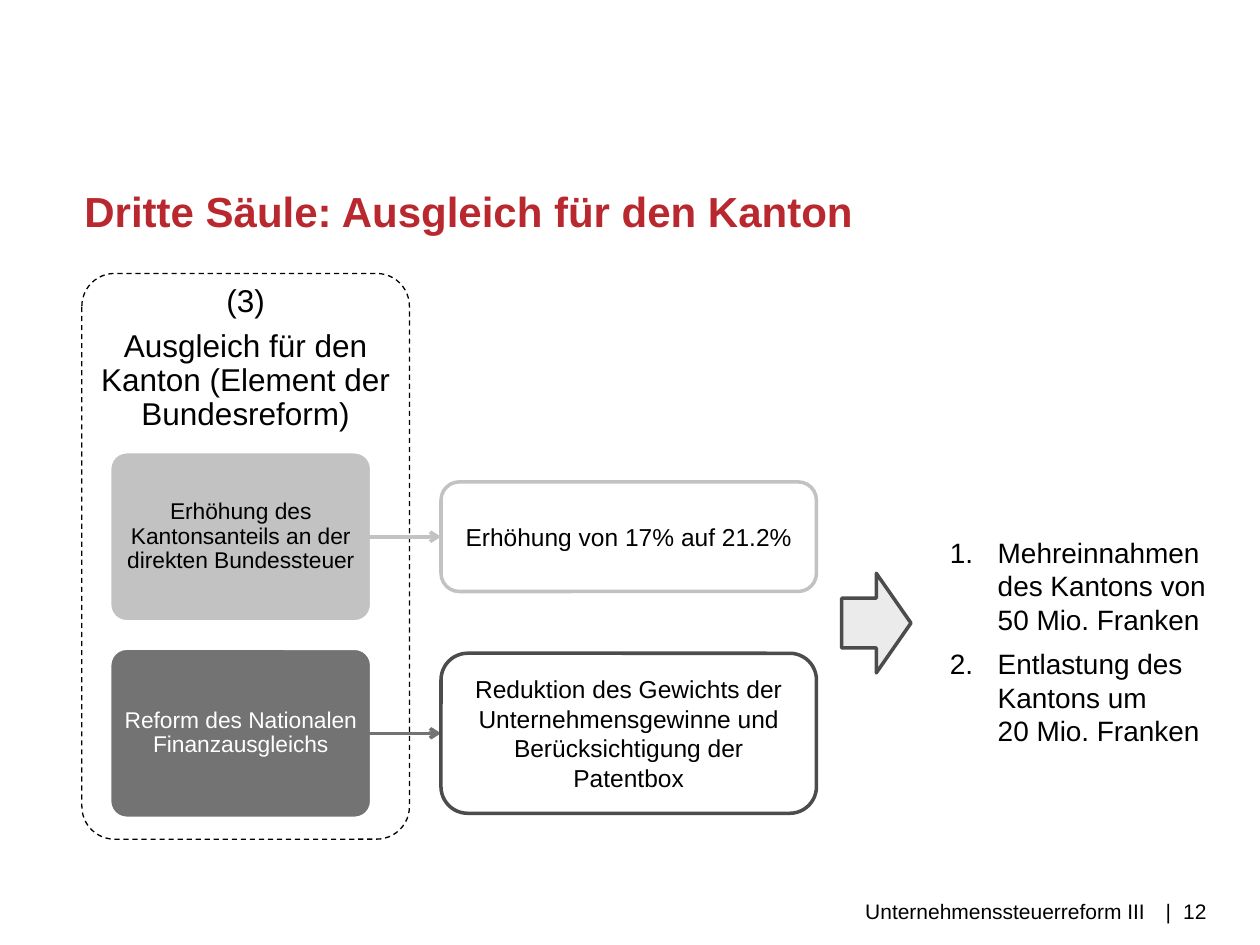
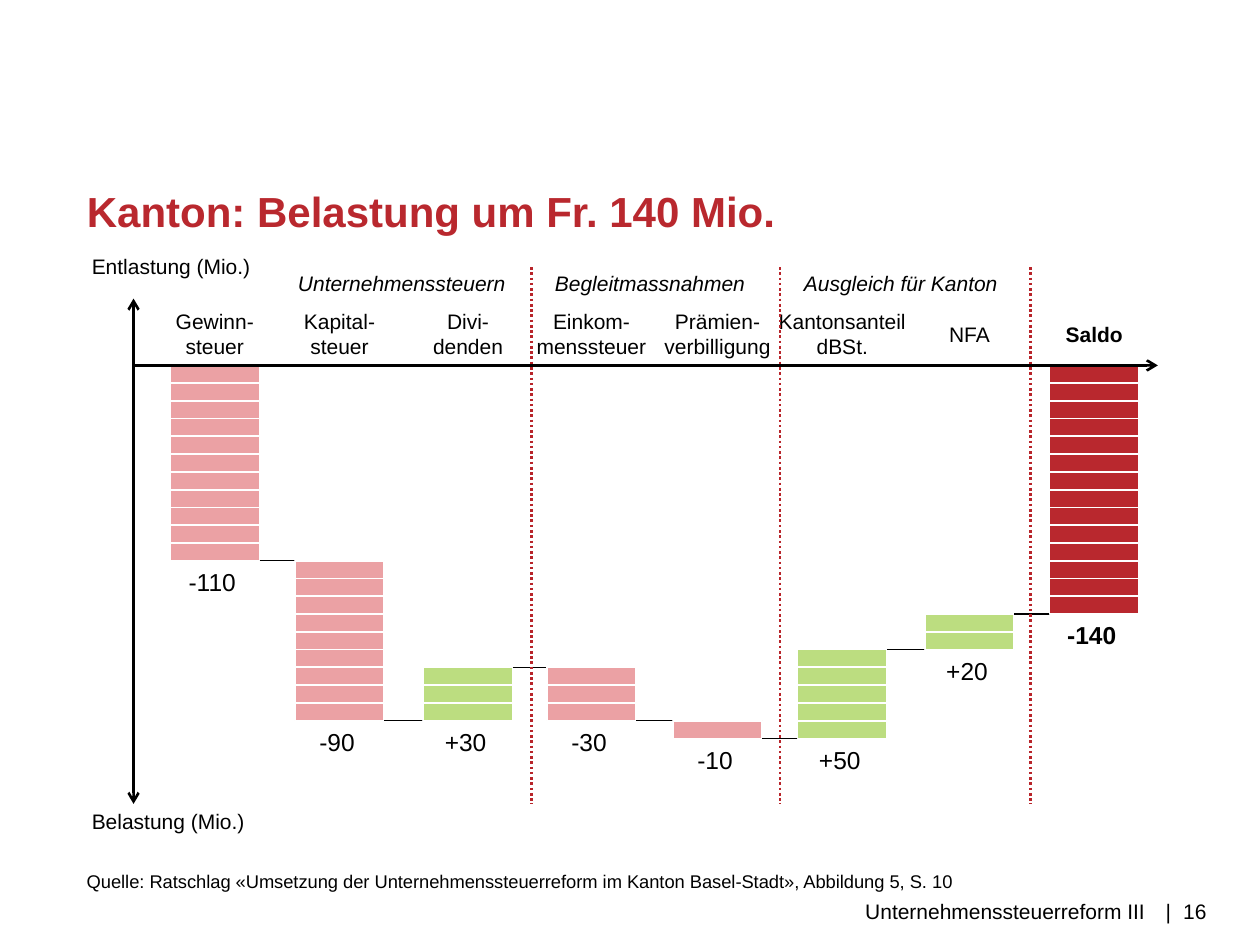
from lxml import etree
from pptx import Presentation
from pptx.dml.color import RGBColor
from pptx.enum.dml import MSO_LINE
from pptx.enum.shapes import MSO_CONNECTOR, MSO_SHAPE
from pptx.enum.text import MSO_ANCHOR, PP_ALIGN
from pptx.oxml.ns import qn
from pptx.util import Inches, Pt

LEFT, CENTER, RIGHT = PP_ALIGN.LEFT, PP_ALIGN.CENTER, PP_ALIGN.RIGHT
TOP, MIDDLE = MSO_ANCHOR.TOP, MSO_ANCHOR.MIDDLE
RECT, ROUNDED, ARROW = MSO_SHAPE.RECTANGLE, MSO_SHAPE.ROUNDED_RECTANGLE, MSO_SHAPE.RIGHT_ARROW
DASH, DOTS = MSO_LINE.DASH, MSO_LINE.ROUND_DOT
STRAIGHT = MSO_CONNECTOR.STRAIGHT

FONT = "Arial"
BLACK, WHITE, RED, DIVIDER_RED = "000000", "FFFFFF", "B9282E", "B8242A"
BURDEN, RELIEF = "EBA1A4", "BCDD80"
SILVER, GREY, CHARCOAL, PALE = "C2C2C2", "737373", "4C4C4C", "EBEBEB"

FOOTER = "Unternehmenssteuerreform III"

PILLAR_TITLE = "Dritte Säule: Ausgleich für den Kanton"
PILLAR = ["(3)", "Ausgleich für den Kanton (Element der Bundesreform)"]
MEASURES = [
    dict(measure="Erhöhung des Kantonsanteils an der direkten Bundessteuer",
         effect="Erhöhung von 17% auf 21.2%",
         fill=SILVER, ink=BLACK, outline=SILVER, effect_height=0.87),
    dict(measure="Reform des Nationalen Finanzausgleichs",
         effect="Reduktion des Gewichts der Unternehmensgewinne und "
                "Berücksichtigung der Patentbox",
         fill=GREY, ink=WHITE, outline=CHARCOAL, effect_height=1.27),
]
RESULTS = ["Mehreinnahmen des Kantons von 50 Mio. Franken",
           "Entlastung des Kantons um\v20 Mio. Franken"]

BURDEN_TITLE = "Kanton: Belastung um Fr. 140 Mio."
STEPS = [
    ("Gewinn-steuer", -110, 1.35, 1.0),
    ("Kapital-steuer", -90, 2.34, 1.0),
    ("Divi-denden", 30, 3.36, 1.0),
    ("Einkom-menssteuer", -30, 4.34, 1.27),
    ("Prämien-\vverbilligung", -10, 5.34, 1.27),
    ("Kantonsanteil\vdBSt.", 50, 6.33, 1.27),
    ("NFA", 20, 7.34, 1.27),
]
BALANCE = ("Saldo", 8.33, 1.27)
STEP_GROUPS = [("Unternehmenssteuern", 4.22),
               ("Begleitmassnahmen", 6.19),
               ("Ausgleich für Kanton", 8.18)]
AXIS_ENDS = [("Entlastung (Mio.)", 1.96), ("Belastung (Mio.)", 6.37)]
SOURCE = ("Quelle: Ratschlag «Umsetzung der Unternehmenssteuerreform im "
          "Kanton Basel-Stadt», Abbildung 5, S. 10")

AXIS_X, AXIS_Y, AXIS_BOTTOM = 1.06, 2.9, 6.38
BAR_WIDTH, BLOCK_VALUE = 0.71, 10
BLOCK_HEIGHT = 1.41 / 10


def rgb(value):
    return RGBColor.from_string(value)


def write(shape, paragraphs, size=12, color=BLACK, bold=False, italic=False,
          align=CENTER, anchor=TOP, insets=(0.1, 0.05, 0.1, 0.05),
          line_spacing=None, space_after=None, numbered=False, tab=None):
    frame = shape.text_frame
    frame.word_wrap = True
    frame.vertical_anchor = anchor
    (frame.margin_left, frame.margin_top,
     frame.margin_right, frame.margin_bottom) = map(Inches, insets)
    if isinstance(paragraphs, str):
        paragraphs = [paragraphs]
    for index, words in enumerate(paragraphs):
        paragraph = frame.add_paragraph() if index else frame.paragraphs[0]
        paragraph.text = words
        paragraph.alignment = align
        if line_spacing:
            paragraph.line_spacing = line_spacing
        if space_after:
            paragraph.space_after = Pt(space_after)
        properties = paragraph._p.get_or_add_pPr()
        if numbered:
            properties.set("marL", str(Inches(0.38)))
            properties.set("indent", str(-Inches(0.38)))
            etree.SubElement(properties, qn("a:buFont"), typeface="+mj-lt")
            etree.SubElement(properties, qn("a:buAutoNum"), type="arabicPeriod")
        if tab:
            stops = etree.SubElement(properties, qn("a:tabLst"))
            etree.SubElement(stops, qn("a:tab"), pos=str(Inches(tab)), algn="l")
        for line_break in paragraph._p.findall(qn("a:br")):
            etree.SubElement(line_break, qn("a:rPr"), sz=str(size * 100))
        for run in paragraph.runs:
            run.font.name, run.font.size = FONT, Pt(size)
            run.font.bold, run.font.italic = bold, italic
            run.font.color.rgb = rgb(color)


def label(slide, words, left, top, width, height, **text_format):
    box = slide.shapes.add_textbox(*map(Inches, (left, top, width, height)))
    write(box, words, **text_format)


def block(slide, kind, left, top, width, height, fill=None, outline=BLACK,
          weight=2, dash=None, rounding=None):
    shape = slide.shapes.add_shape(kind, *map(Inches, (left, top, width, height)))
    shape.shadow.inherit = False
    if fill:
        shape.fill.solid()
        shape.fill.fore_color.rgb = rgb(fill)
    else:
        shape.fill.background()
    shape.line.color.rgb = rgb(outline)
    shape.line.width = Pt(weight)
    if dash:
        shape.line.dash_style = dash
    if rounding:
        shape.adjustments[0] = rounding
    return shape


def connect(slide, x1, y1, x2, y2, color=BLACK, weight=0.75, dash=None, ends=()):
    line = slide.shapes.add_connector(STRAIGHT, *map(Inches, (x1, y1, x2, y2)))
    line.line.color.rgb = rgb(color)
    line.line.width = Pt(weight)
    if dash:
        line.line.dash_style = dash
    outline = line.line._get_or_add_ln()
    for end in ends:
        etree.SubElement(outline, qn(f"a:{end}"), type="arrow")
    etree.SubElement(line._element.spPr, qn("a:effectLst"))


def start_slide(deck, title, title_left, number):
    slide = deck.slides.add_slide(deck.slide_layouts[6])
    label(slide, title, title_left, 1.47, 8.9, 0.4, size=24, color=RED,
          bold=True, align=LEFT, insets=(0, 0, 0, 0))
    footer_insets = (0, 0.03, 0, 0)
    label(slide, FOOTER, 2.99, 7.1, 6.1, 0.4, align=RIGHT, insets=footer_insets)
    label(slide, f"|\t{number}", 9.25, 7.1, 0.75, 0.4, align=LEFT,
          insets=footer_insets, tab=0.14)
    return slide


def build_pillar(deck):
    slide = start_slide(deck, PILLAR_TITLE, 0.67, 12)
    measure_left, measure_width, measure_height = 0.87, 2.08, 1.35
    effect_left, effect_width = 3.5, 2.98
    first_middle, row_pitch = 4.26, 1.56

    block(slide, ROUNDED, 0.65, 2.17, 2.6, 4.49, weight=0.75, dash=DASH, rounding=0.1)
    label(slide, PILLAR, 0.65, 2.17, 2.6, 1.35, size=18, anchor=MIDDLE,
          insets=(0.07,) * 4, line_spacing=0.9, space_after=6.3)

    for row, item in enumerate(MEASURES):
        middle = first_middle + row * row_pitch
        measure = block(slide, ROUNDED, measure_left, middle - measure_height / 2,
                        measure_width, measure_height, item["fill"], WHITE, rounding=0.1)
        write(measure, item["measure"], size=13, color=item["ink"], anchor=MIDDLE,
              insets=(0.04, 0.03, 0.04, 0.03), line_spacing=0.9)
        connect(slide, measure_left + measure_width - 0.04, middle, effect_left, middle,
                item["fill"], 2, ends=["tailEnd"])
        effect = block(slide, ROUNDED, effect_left, middle - item["effect_height"] / 2,
                       effect_width, item["effect_height"], outline=item["outline"])
        write(effect, item["effect"], size=14, anchor=MIDDLE)

    block(slide, ARROW, 6.68, 4.55, 0.55, 0.79, PALE, CHARCOAL)
    label(slide, RESULTS, 7.44, 4.2, 2.28, 1.8, size=16, align=LEFT,
          space_after=6, numbered=True)


def stack(slide, left, start, end, color):
    top, bottom = sorted(AXIS_Y - level / BLOCK_VALUE * BLOCK_HEIGHT
                         for level in (start, end))
    for index in range(abs(end - start) // BLOCK_VALUE):
        block(slide, RECT, left, top + index * BLOCK_HEIGHT, BAR_WIDTH,
              BLOCK_HEIGHT, color, WHITE, 1)
    return bottom


def bar_labels(slide, name, value, left, name_width, bottom, bold=False):
    middle = left + BAR_WIDTH / 2
    label(slide, name, middle - name_width / 2, 2.39, name_width, 0.52,
          anchor=MIDDLE, bold=bold)
    label(slide, f"{value:+d}", left - 0.02, bottom, BAR_WIDTH, 0.34,
          size=14, bold=bold)


def build_waterfall(deck):
    slide = start_slide(deck, BURDEN_TITLE, 0.69, 16)
    balance_name, balance_left, balance_width = BALANCE
    next_lefts = [step[2] for step in STEPS[1:]] + [balance_left]

    level = 0
    for (name, change, left, name_width), next_left in zip(STEPS, next_lefts):
        bottom = stack(slide, left, level, level + change,
                       RELIEF if change > 0 else BURDEN)
        bar_labels(slide, name, change, left, name_width, bottom)
        level += change
        level_y = AXIS_Y - level / BLOCK_VALUE * BLOCK_HEIGHT
        connect(slide, left + BAR_WIDTH, level_y, next_left, level_y)
    bottom = stack(slide, balance_left, 0, level, RED)
    bar_labels(slide, balance_name, level, balance_left, balance_width, bottom, bold=True)

    connect(slide, AXIS_X, AXIS_BOTTOM, AXIS_X, 2.37, weight=1.5,
            ends=["headEnd", "tailEnd"])
    connect(slide, AXIS_X, AXIS_Y, 9.19, AXIS_Y, weight=1.5, ends=["tailEnd"])
    for words, top in AXIS_ENDS:
        label(slide, words, 0.63, top, 1.71, 0.3, align=LEFT)
    for group, divider in STEP_GROUPS:
        connect(slide, divider, 2.12, divider, AXIS_BOTTOM, DIVIDER_RED, 1.5, DOTS)
        label(slide, group, divider - 2.01, 2.1, 1.96, 0.3, italic=True)
    label(slide, SOURCE, 0.59, 6.86, 8.43, 0.28, size=10.5, align=LEFT)


def main():
    deck = Presentation()
    deck.slide_width, deck.slide_height = Inches(10), Inches(7.5)
    build_pillar(deck)
    build_waterfall(deck)
    deck.save("out.pptx")


if __name__ == "__main__":
    main()
